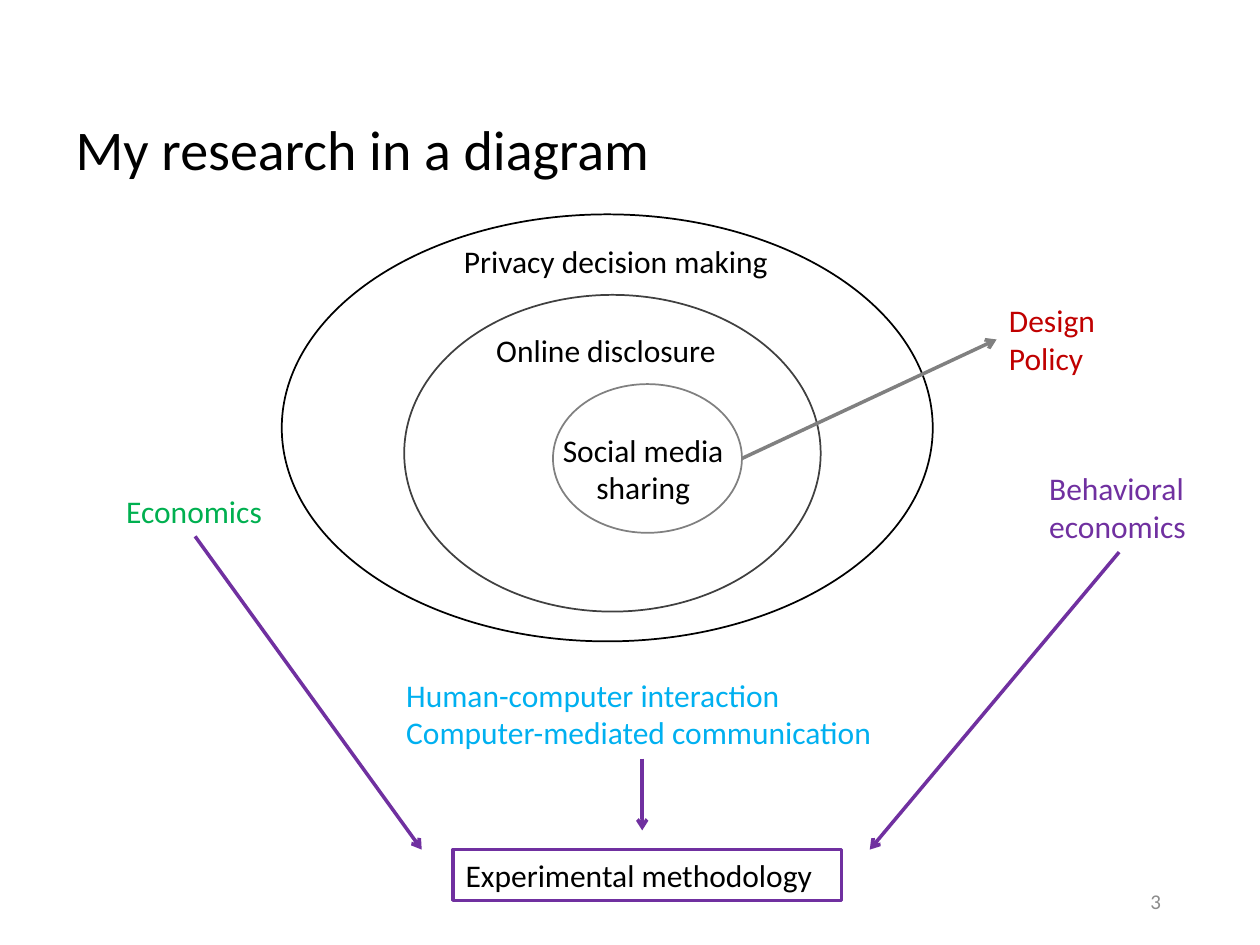
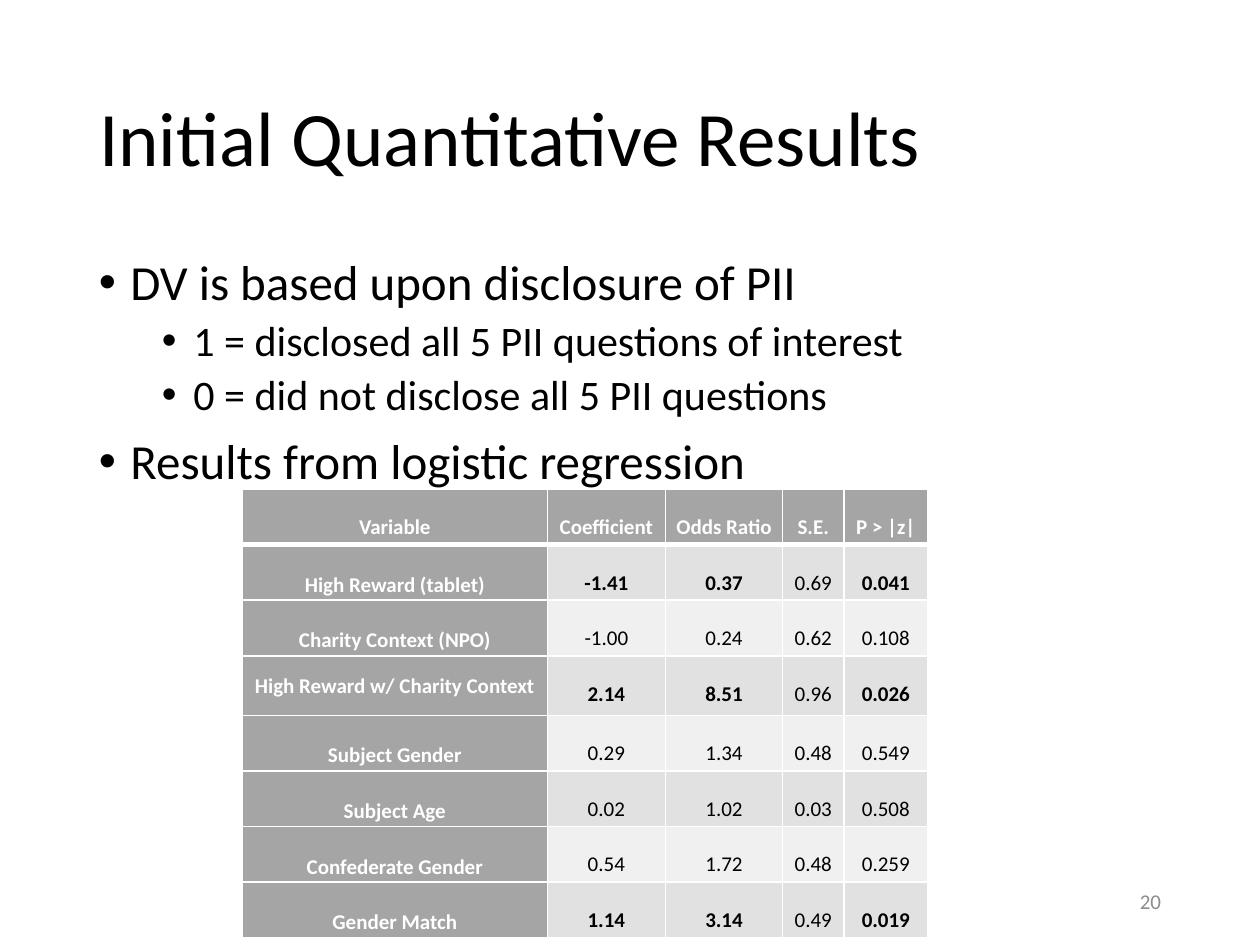
from dataclasses import dataclass

from lxml.etree import SubElement
from pptx import Presentation
from pptx.dml.color import RGBColor
from pptx.enum.shapes import MSO_CONNECTOR, MSO_SHAPE
from pptx.enum.text import MSO_ANCHOR, MSO_AUTO_SIZE, PP_ALIGN
from pptx.oxml.ns import qn
from pptx.util import Pt


@dataclass(frozen=True)
class Theme:
    font: str = "Calibri"
    black: str = "000000"
    white: str = "FFFFFF"
    dark: str = "404040"
    gray: str = "808080"
    page: str = "8C8C8C"
    red: str = "C00000"
    green: str = "00B050"
    blue: str = "00B0F0"
    purple: str = "7030A0"
    head: str = "A5A5A5"
    bands: tuple = ("F0F0F0", "E1E1E1")
    label: int = 18
    small: int = 12
    levels: tuple = (28, 24)


THEME = Theme()
SIZE = (720, 540)
TITLE_ONLY = 5

POINTS = [
    (0, "DV is based upon disclosure of PII"),
    (1, "1 = disclosed all 5 PII questions of interest"),
    (1, "0 = did not disclose all 5 PII questions"),
    (0, "Results from logistic regression"),
]

HEADS = ["Variable", "Coefficient", "Odds Ratio", "S.E.", "P > |z|"]
RESULTS = [
    ("High Reward (tablet)", "-1.41", "0.37", "0.69", "0.041"),
    ("Charity Context (NPO)", "-1.00", "0.24", "0.62", "0.108"),
    ("High Reward w/ Charity Context", "2.14", "8.51", "0.96", "0.026"),
    ("Subject Gender", "0.29", "1.34", "0.48", "0.549"),
    ("Subject Age", "0.02", "1.02", "0.03", "0.508"),
    ("Confederate Gender", "0.54", "1.72", "0.48", "0.259"),
    ("Gender Match", "1.14", "3.14", "0.49", "0.019"),
]
WIDTHS = [174.25, 67.5, 67, 35, 48]
ROW, TALL_ROW, TALL = 31.75, 34, 3


def color(code):
    return RGBColor.from_string(code)


def lengths(values):
    return [Pt(value) for value in values]


def shift(box, x, y):
    return box[0] + x, box[1] + y


def add_run(para, text, size, code, bold=False):
    run = para.add_run()
    run.text = text
    font = run.font
    font.name, font.size, font.bold = THEME.font, Pt(size), bold
    font.color.rgb = color(code)


def add_lines(frame, lines, code):
    for i, line in enumerate(lines):
        para = frame.add_paragraph() if i else frame.paragraphs[0]
        para.alignment = PP_ALIGN.LEFT
        add_run(para, line, THEME.label, code)


def add_title(slide, box, text, size):
    title = slide.shapes.title
    title.left, title.top, title.width, title.height = lengths(box)
    frame = title.text_frame
    frame.auto_size = MSO_AUTO_SIZE.NONE
    frame.vertical_anchor = MSO_ANCHOR.MIDDLE
    para = frame.paragraphs[0]
    para.alignment, para.line_spacing = PP_ALIGN.LEFT, 0.9
    add_run(para, text, size, THEME.black)


def add_page(slide, number):
    frame = slide.shapes.add_textbox(*lengths((508.5, 500.5, 162, 28.75))).text_frame
    frame.word_wrap = True
    frame.vertical_anchor = MSO_ANCHOR.MIDDLE
    para = frame.paragraphs[0]
    para.alignment = PP_ALIGN.RIGHT
    add_run(para, str(number), THEME.small, THEME.page)


def add_label(slide, box, x, y, width, lines, code):
    height = 29 if len(lines) == 1 else 51
    label = slide.shapes.add_textbox(*lengths((*shift(box, x, y), width, height)))
    frame = label.text_frame
    frame.word_wrap = False
    frame.auto_size = MSO_AUTO_SIZE.SHAPE_TO_FIT_TEXT
    add_lines(frame, lines, code)
    return label


def add_ring(slide, box, x, y, width, height, code):
    ring = slide.shapes.add_shape(
        MSO_SHAPE.OVAL, *lengths((*shift(box, x, y), width, height)))
    ring.shadow.inherit = False
    ring.fill.background()
    ring.line.color.rgb, ring.line.width = color(code), Pt(1)


def add_arrow(slide, start, end, code):
    arrow = slide.shapes.add_connector(
        MSO_CONNECTOR.STRAIGHT, *lengths((*start, *end)))
    arrow.line.color.rgb, arrow.line.width = color(code), Pt(2)
    props = arrow.element.spPr
    SubElement(props.find(qn("a:ln")), qn("a:tailEnd"), type="arrow")
    SubElement(props, qn("a:effectLst"))
    return arrow


def add_rings(slide, box):
    for ring in [(96, 0, 372, 244, THEME.black),
                 (166, 46, 238, 181, THEME.dark),
                 (251, 97, 108, 85, THEME.gray)]:
        add_ring(slide, box, *ring)
    add_label(slide, box, 193, 12, 190, ["Privacy decision making"], THEME.black)
    add_label(slide, box, 211.5, 63, 141, ["Online disclosure"], THEME.black)
    core = add_label(slide, box, 249.5, 120, 107, ["Social media", "sharing"], THEME.black)
    core.text_frame.paragraphs[1].alignment = PP_ALIGN.CENTER
    goal = add_label(slide, box, 504.5, 46, 64, ["Design", "Policy"], THEME.red)
    arrow = add_arrow(slide, shift(box, 359, 139.5), shift(box, 504.5, 71.5), THEME.gray)
    arrow.end_connect(goal, 1)


def add_method(slide, box):
    rect = slide.shapes.add_shape(
        MSO_SHAPE.RECTANGLE, *lengths((*shift(box, 194, 363), 222, 29)))
    rect.shadow.inherit = False
    rect.fill.solid()
    rect.fill.fore_color.rgb = color(THEME.white)
    rect.line.color.rgb, rect.line.width = color(THEME.purple), Pt(2)
    frame = rect.text_frame
    frame.word_wrap = True
    frame.vertical_anchor = MSO_ANCHOR.TOP
    add_lines(frame, ["Experimental methodology"], THEME.black)

    fields = [
        ((0, 155, 93, ["Economics"], THEME.green), (176, 363)),
        ((160, 260, 284, ["Human-computer interaction",
                          "Computer-mediated communication"], THEME.blue), (302, 352)),
        ((527.5, 142, 94, ["Behavioral", "economics"], THEME.purple), (432, 363)),
    ]
    for label, end in fields:
        field = add_label(slide, box, *label)
        tip = shift(box, *end)
        add_arrow(slide, tip, tip, THEME.purple).begin_connect(field, 2)


def add_points(slide, box):
    frame = slide.shapes.add_textbox(*lengths(box)).text_frame
    frame.word_wrap = True
    for i, (level, text) in enumerate(POINTS):
        para = frame.add_paragraph() if i else frame.paragraphs[0]
        para.level, para.line_spacing = level, 0.9
        para.space_before = Pt((10, 5)[level])
        props = para._p.get_or_add_pPr()
        props.set("marL", str(Pt(18 + 36 * level)))
        props.set("indent", str(Pt(-18)))
        SubElement(props, qn("a:buFont"), typeface="Arial")
        SubElement(props, qn("a:buChar"), char="•")
        add_run(para, text, THEME.levels[level], THEME.black)


def add_edges(cell, row):
    props = cell._tc.get_or_add_tcPr()
    weights = {"L": 1, "R": 1, "T": 3 if row == 1 else 1, "B": 1 if row else 3}
    for i, (side, weight) in enumerate(weights.items()):
        edge = SubElement(props, qn(f"a:ln{side}"), w=str(Pt(weight)))
        fill = SubElement(edge, qn("a:solidFill"))
        SubElement(fill, qn("a:srgbClr"), val=THEME.white)
        props.insert(i, edge)


def fill_cell(cell, text, row, col, strong):
    head = row == 0 or col == 0
    cell.fill.solid()
    cell.fill.fore_color.rgb = color(THEME.head if head else THEME.bands[row % 2])
    cell.margin_left = cell.margin_right = Pt(5)
    cell.margin_top = cell.margin_bottom = 0
    middle = row and col == 0
    cell.vertical_anchor = MSO_ANCHOR.MIDDLE if middle else MSO_ANCHOR.TOP
    para = cell.text_frame.paragraphs[0]
    para.alignment = PP_ALIGN.CENTER
    para.line_spacing = 1.07 if (row, col) == (TALL, 0) else 2.0
    bold = head or (strong and HEADS[col] != "S.E.")
    add_run(para, text, THEME.small, THEME.white if head else THEME.black, bold)
    add_edges(cell, row)


def add_results(slide, box):
    rows = [HEADS, *RESULTS]
    table = slide.shapes.add_table(len(rows), len(HEADS), *lengths(box)).table
    table.first_row = table.horz_banding = False
    for column, width in zip(table.columns, WIDTHS):
        column.width = Pt(width)
    for r, values in enumerate(rows):
        table.rows[r].height = Pt(TALL_ROW if r == TALL else ROW)
        strong = r > 0 and float(values[-1]) < 0.05
        for c, text in enumerate(values):
            fill_cell(table.cell(r, c), text, r, c, strong)


def add_slide(deck, box, title, size, page):
    slide = deck.slides.add_slide(deck.slide_layouts[TITLE_ONLY])
    add_title(slide, box, title, size)
    add_page(slide, page)
    return slide


def main():
    deck = Presentation()
    deck.slide_width, deck.slide_height = lengths(SIZE)

    slide = add_slide(deck, (36, 42, 648, 90), "My research in a diagram", 32, 3)
    scheme = (65, 122.5)
    add_rings(slide, scheme)
    add_method(slide, scheme)

    slide = add_slide(deck, (49.5, 28.75, 621, 104.5), "Initial Quantitative Results", 44, 20)
    add_points(slide, (49.5, 144, 621, 342.5))
    add_results(slide, (138.5, 279.5, sum(WIDTHS), 7 * ROW + TALL_ROW))

    deck.save("out.pptx")


if __name__ == "__main__":
    main()
